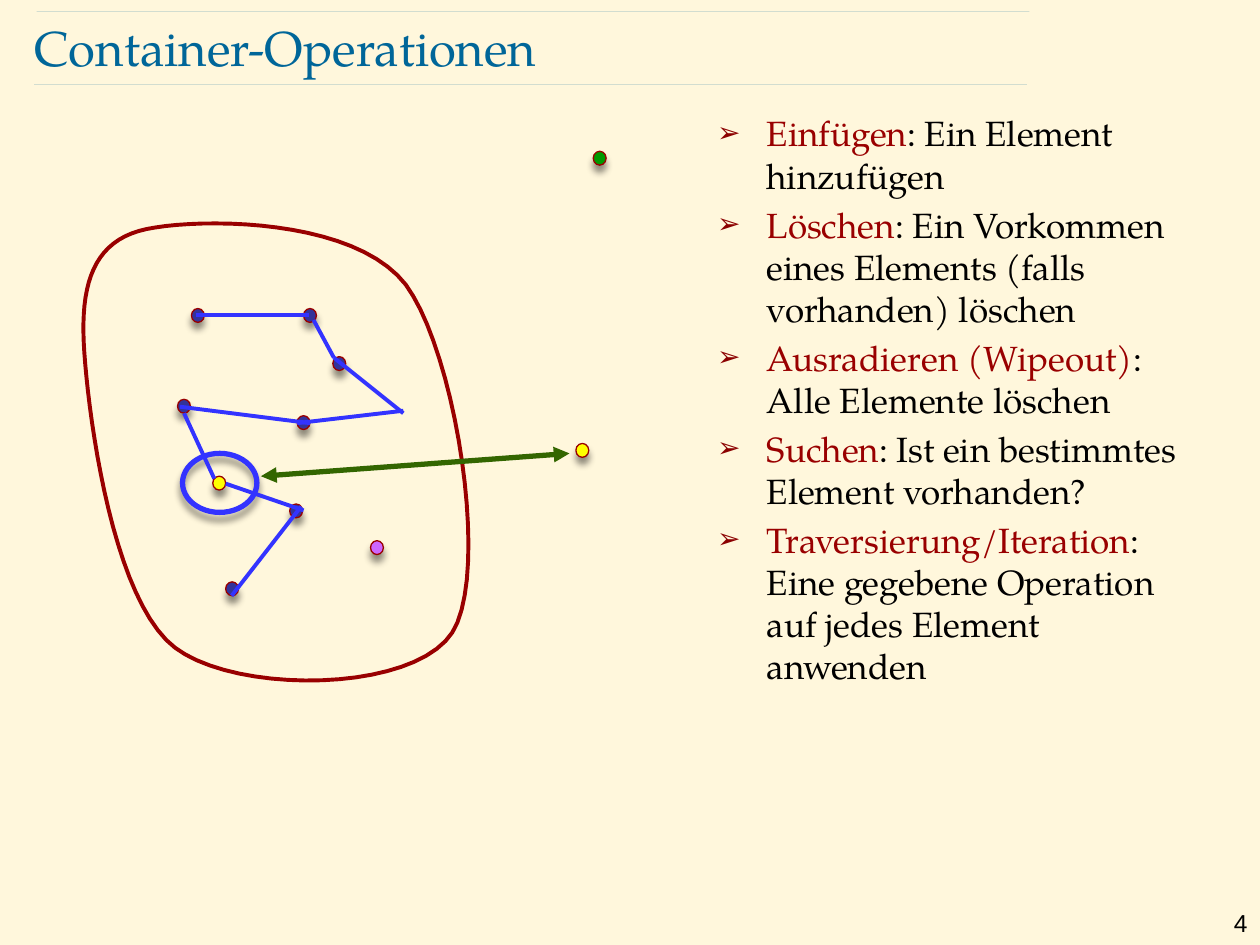
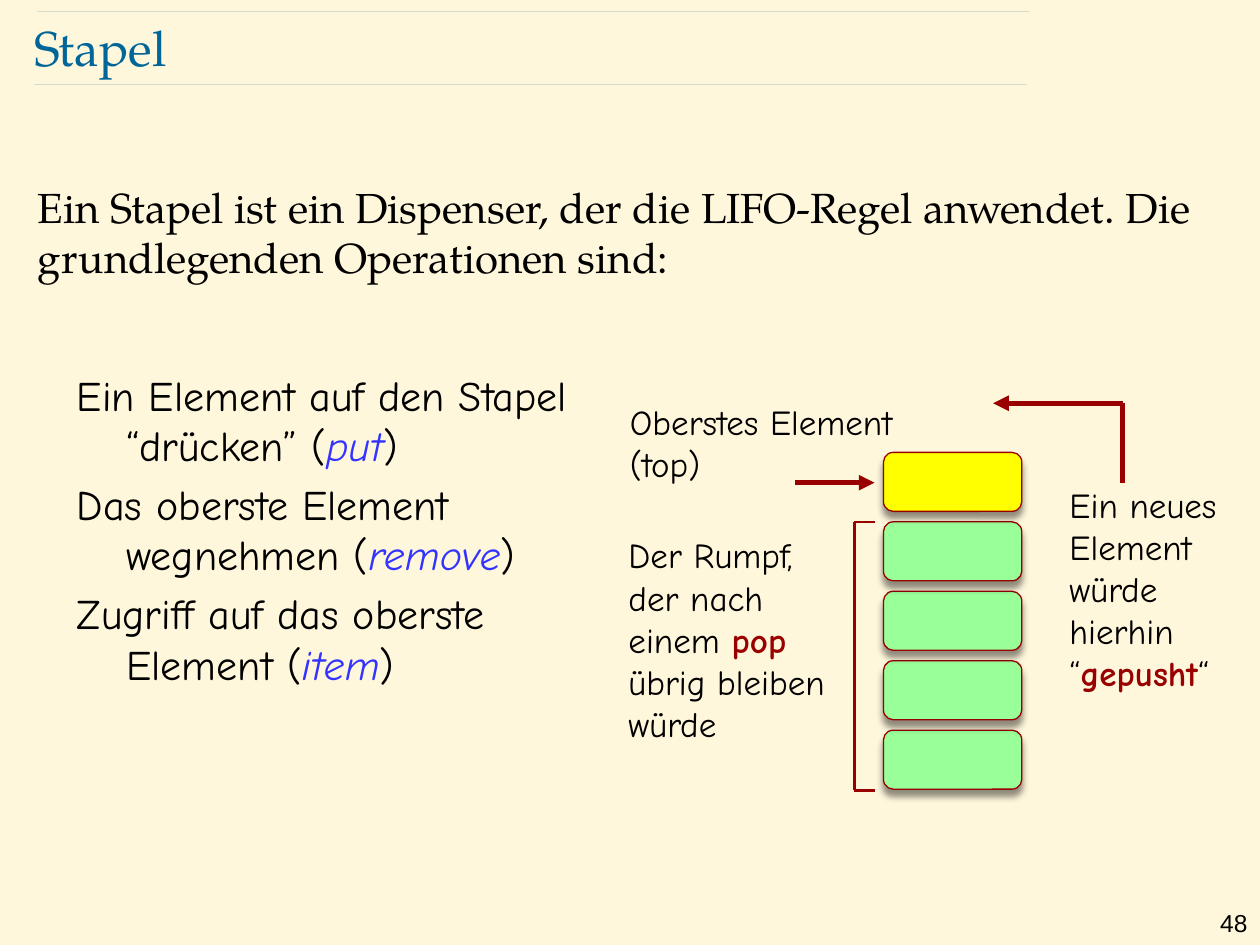
"""Builds two lecture slides on container operations and the stack."""
from dataclasses import dataclass

from lxml import etree
from pptx import Presentation
from pptx.dml.color import RGBColor
from pptx.enum import shapes, text
from pptx.oxml.ns import qn
from pptx.util import Cm, Pt


@dataclass(frozen=True)
class Theme:
    paper: str = "FFF7DC"
    title: str = "006699"
    ink: str = "000000"
    red: str = "990000"
    bullet: str = "8B0000"
    blue: str = "3333FF"
    navy: str = "333399"
    yellow: str = "FFFF00"
    violet: str = "CC66FF"
    green: str = "009900"
    olive: str = "336600"
    mint: str = "99FF99"
    serif: str = "TeX Gyre Pagella"
    hand: str = "Comic Neue"
    plain: str = "Arial"
    title_size: int = 28
    lead_size: int = 24
    text_size: int = 20
    number_size: int = 14


THEME = Theme()
STYLES = {
    "term": dict(color=THEME.red),
    "strong": dict(color=THEME.red, bold=True),
    "call": dict(color=THEME.blue, italic=True),
}

RULES = [((0.69, 1.7), (20.7, 1.7)), ((0.74, 0.23), (20.75, 0.23))]
TITLE_BOX = (0.69, 0.33, 22.07, 1.22)
NUMBER_BOX = (24, 18.19, 1.4, 0.61)

OPERATIONS = [
    [("Einfügen", "term"), ": Ein Element hinzufügen"],
    [("Löschen", "term"), ": Ein Vorkommen eines Elements (falls vorhanden) löschen"],
    [("Ausradieren (Wipeout)", "term"), ": Alle Elemente löschen"],
    [("Suchen", "term"), ": Ist ein bestimmtes Element vorhanden?"],
    [("Traversierung/Iteration", "term"),
     ": Eine gegebene Operation auf jedes Element anwenden"],
]
CONTAINER_START = (1.7, 7.11)
CONTAINER_CURVES = [
    ((1.8, 8.53), (2.29, 12.12), (3.53, 13.06)),
    ((4.78, 14), (8.33, 13.97), (9.12, 12.75)),
    ((9.88, 11.53), (9.19, 7.11), (8.18, 5.74)),
    ((7.14, 4.39), (4.04, 4.39), (2.95, 4.62)),
    ((1.88, 4.85), (1.6, 5.72), CONTAINER_START),
]
CURVE_STEPS = 20
ELEMENT_SIZE = (0.26, 0.28)
ELEMENTS = {
    THEME.navy: [(3.86, 6.22), (4.55, 11.73), (6.12, 6.22), (3.58, 8.05),
                 (6.71, 7.19), (5.84, 10.16), (5.99, 8.38)],
    THEME.yellow: [(4.29, 9.6), (11.61, 8.94)],
    THEME.violet: [(7.47, 10.9)],
    THEME.green: [(11.96, 3.05)],
}
FOUND_RING = (3.68, 9.14, 1.5, 1.19)
MATCH = ((11.48, 9.14), (5.26, 9.6))
TRAVERSAL = [
    ((3.96, 6.35), (6.22, 6.35)),
    ((6.32, 6.45), (6.73, 7.21)),
    ((6.73, 7.21), (8.13, 8.33)),
    ((5.99, 8.53), (8.13, 8.28)),
    ((3.63, 8.2), (6.25, 8.53)),
    ((3.71, 8.33), (4.32, 9.65)),
    ((4.55, 9.75), (6.12, 10.29)),
    ((6.07, 10.21), (4.67, 12.01)),
]

STACK_LEAD = [["Ein Stapel ist ein Dispenser, der die LIFO-Regel anwendet. "
               "Die grundlegenden Operationen sind:"]]
STACK_OPERATIONS = [
    ["Ein Element auf den Stapel “drücken” (", ("put", "call"), ")"],
    ["Das oberste Element wegnehmen (", ("remove", "call"), ")"],
    ["Zugriff auf das oberste Element (", ("item", "call"), ")"],
]
STACK_NOTES = [
    ((12.45, 7.95, 7.14, 1.96), ["Oberstes Element (top)"]),
    ((21.31, 9.63, 4.22, 4.52),
     ["Ein neues Element würde hierhin “", ("gepusht", "strong"), "“"]),
    ((12.42, 10.64, 4.72, 5.38),
     ["Der Rumpf, der nach einem ", ("pop", "strong"), " übrig bleiben würde"]),
]
STACK_COLORS = [THEME.yellow] + [THEME.mint] * 4
STACK_LEFT, STACK_TOP, STACK_PITCH = 17.81, 9.12, 1.4
CELL_SIZE = (2.79, 1.19)
TOP_ARROW = ((16.03, 9.73), (17.63, 9.73))
PUSH_PATH = [(22.63, 9.73), (22.63, 8.13), (20.02, 8.13)]
BODY_BRACKET = [(17.63, 10.52), (17.22, 10.52), (17.22, 15.93), (17.63, 15.93)]


def rgb(color):
    return RGBColor.from_string(color)


def add_xml(parent, tag, **attributes):
    return etree.SubElement(parent, qn(tag), attributes)


def place(box, bounds):
    box.left, box.top, box.width, box.height = map(Cm, bounds)


def style_font(font, color, face=None, size=None, bold=None, italic=None):
    font.color.rgb = rgb(color)
    if face:
        font.name, font.size = face, Pt(size)
    font.bold, font.italic = bold, italic


def write(frame, paragraphs, face, size, indent=0, bullet=None,
          align=text.PP_ALIGN.LEFT):
    frame.word_wrap = True
    frame.auto_size = text.MSO_AUTO_SIZE.NONE
    for index, pieces in enumerate(paragraphs):
        paragraph = frame.add_paragraph() if index else frame.paragraphs[0]
        properties = paragraph._p.get_or_add_pPr()
        properties.set("marL", str(Cm(indent)))
        properties.set("indent", str(-Cm(indent)))
        if bullet:
            add_xml(add_xml(properties, "a:buClr"), "a:srgbClr", val=THEME.bullet)
            add_xml(properties, "a:buSzPct", val="80000")
            add_xml(properties, "a:buChar", char=bullet)
        else:
            add_xml(properties, "a:buNone")
        paragraph.alignment = align
        paragraph.space_before = Pt(0.2 * size if index else 0)
        style_font(paragraph.font, THEME.ink, face, size)
        for piece in pieces:
            words, style = (piece, None) if isinstance(piece, str) else piece
            run = paragraph.add_run()
            run.text = words
            if style:
                style_font(run.font, **STYLES[style])


def add_text(slide, bounds, paragraphs, face, size, **options):
    box = slide.shapes.add_textbox(*map(Cm, bounds))
    write(box.text_frame, paragraphs, face, size, **options)


def add_line(slide, start, end, color, width, arrows=()):
    line = slide.shapes.add_connector(
        shapes.MSO_CONNECTOR.STRAIGHT, *map(Cm, start + end))
    line.line.color.rgb = rgb(color)
    line.line.width = Pt(width)
    for arrow in arrows:
        add_xml(line.line._ln, arrow, type="triangle")
    add_xml(line._element.spPr, "a:effectLst")
    return line


def add_path(slide, points, color, width, arrows=()):
    legs = list(zip(points, points[1:]))
    for leg in legs:
        add_line(slide, *leg, color, width, arrows if leg == legs[-1] else ())


def add_shaded(slide, kind, bounds, fill, outline=THEME.red, width=0.75):
    shape = slide.shapes.add_shape(kind, *map(Cm, bounds))
    if fill:
        shape.fill.solid()
        shape.fill.fore_color.rgb = rgb(fill)
    else:
        shape.fill.background()
    shape.line.color.rgb = rgb(outline)
    shape.line.width = Pt(width)
    shadow = add_xml(add_xml(shape._element.spPr, "a:effectLst"), "a:outerShdw",
                     blurRad=str(Pt(4)), dist=str(Pt(4)), dir="5400000",
                     rotWithShape="0")
    add_xml(add_xml(shadow, "a:srgbClr", val="000000"), "a:alpha", val="43000")


def start_slide(deck, title, number):
    slide = deck.slides.add_slide(deck.slide_layouts[1])
    for start, end in RULES:
        rule = add_line(slide, start, end, THEME.title, 0.1)
        add_xml(rule._element.spPr.find(".//" + qn("a:srgbClr")),
                "a:alpha", val="49000")
    add_text(slide, NUMBER_BOX, [[number]], THEME.plain, THEME.number_size,
             align=text.PP_ALIGN.RIGHT)
    heading = slide.shapes.title
    place(heading, TITLE_BOX)
    frame = heading.text_frame
    frame.margin_left = frame.margin_top = frame.margin_right = frame.margin_bottom = 0
    frame.vertical_anchor = text.MSO_ANCHOR.MIDDLE
    write(frame, [[title]], THEME.serif, THEME.title_size)
    frame.paragraphs[0].font.color.rgb = rgb(THEME.title)
    return slide


def fill_body(slide, bounds, paragraphs, size, **options):
    body = slide.placeholders[1]
    place(body, bounds)
    write(body.text_frame, paragraphs, THEME.serif, size, **options)


def curve_points(start, curves):
    for first, second, end in curves:
        for step in range(1, CURVE_STEPS + 1):
            t = step / CURVE_STEPS
            yield tuple(
                Cm((1 - t) ** 3 * a + 3 * (1 - t) ** 2 * t * b
                   + 3 * (1 - t) * t ** 2 * c + t ** 3 * d)
                for a, b, c, d in zip(start, first, second, end))
        start = end


def add_container(slide):
    builder = slide.shapes.build_freeform(*map(Cm, CONTAINER_START))
    builder.add_line_segments(curve_points(CONTAINER_START, CONTAINER_CURVES))
    container = builder.convert_to_shape()
    container.shadow.inherit = False
    container.fill.background()
    container.line.color.rgb = rgb(THEME.red)
    container.line.width = Pt(2.25)


def build_operations(deck):
    slide = start_slide(deck, "Container-Operationen", "4")
    fill_body(slide, (14.2, 2.13, 10.11, 15.6), OPERATIONS, THEME.text_size,
              indent=1, bullet="➢")
    add_container(slide)
    oval = shapes.MSO_SHAPE.OVAL
    for color, corners in ELEMENTS.items():
        for corner in corners:
            add_shaded(slide, oval, corner + ELEMENT_SIZE, color)
    add_line(slide, *MATCH, THEME.olive, 3, ("a:headEnd", "a:tailEnd"))
    add_shaded(slide, oval, FOUND_RING, None, THEME.blue, 3)
    for start, end in TRAVERSAL:
        add_line(slide, start, end, THEME.blue, 2.25)


def build_stack(deck):
    slide = start_slide(deck, "Stapel", "48")
    fill_body(slide, (0.51, 3.53, 24.21, 2.41), STACK_LEAD, THEME.lead_size)
    add_text(slide, (1.3, 7.32, 11.4, 10.01), STACK_OPERATIONS, THEME.hand,
             THEME.lead_size, indent=1)
    for row, color in reversed(list(enumerate(STACK_COLORS))):
        corner = (STACK_LEFT, STACK_TOP + row * STACK_PITCH)
        add_shaded(slide, shapes.MSO_SHAPE.ROUNDED_RECTANGLE,
                   corner + CELL_SIZE, color)
    for bounds, note in STACK_NOTES:
        add_text(slide, bounds, [note], THEME.hand, THEME.text_size)
    add_line(slide, *TOP_ARROW, THEME.red, 3, ("a:tailEnd",))
    add_path(slide, PUSH_PATH, THEME.red, 3, ("a:tailEnd",))
    add_path(slide, BODY_BRACKET, THEME.red, 1.5)


def main():
    deck = Presentation()
    deck.slide_width, deck.slide_height = Cm(25.4), Cm(19.05)
    background = deck.slide_master.background.fill
    background.solid()
    background.fore_color.rgb = rgb(THEME.paper)
    build_operations(deck)
    build_stack(deck)
    deck.save("out.pptx")


if __name__ == "__main__":
    main()
